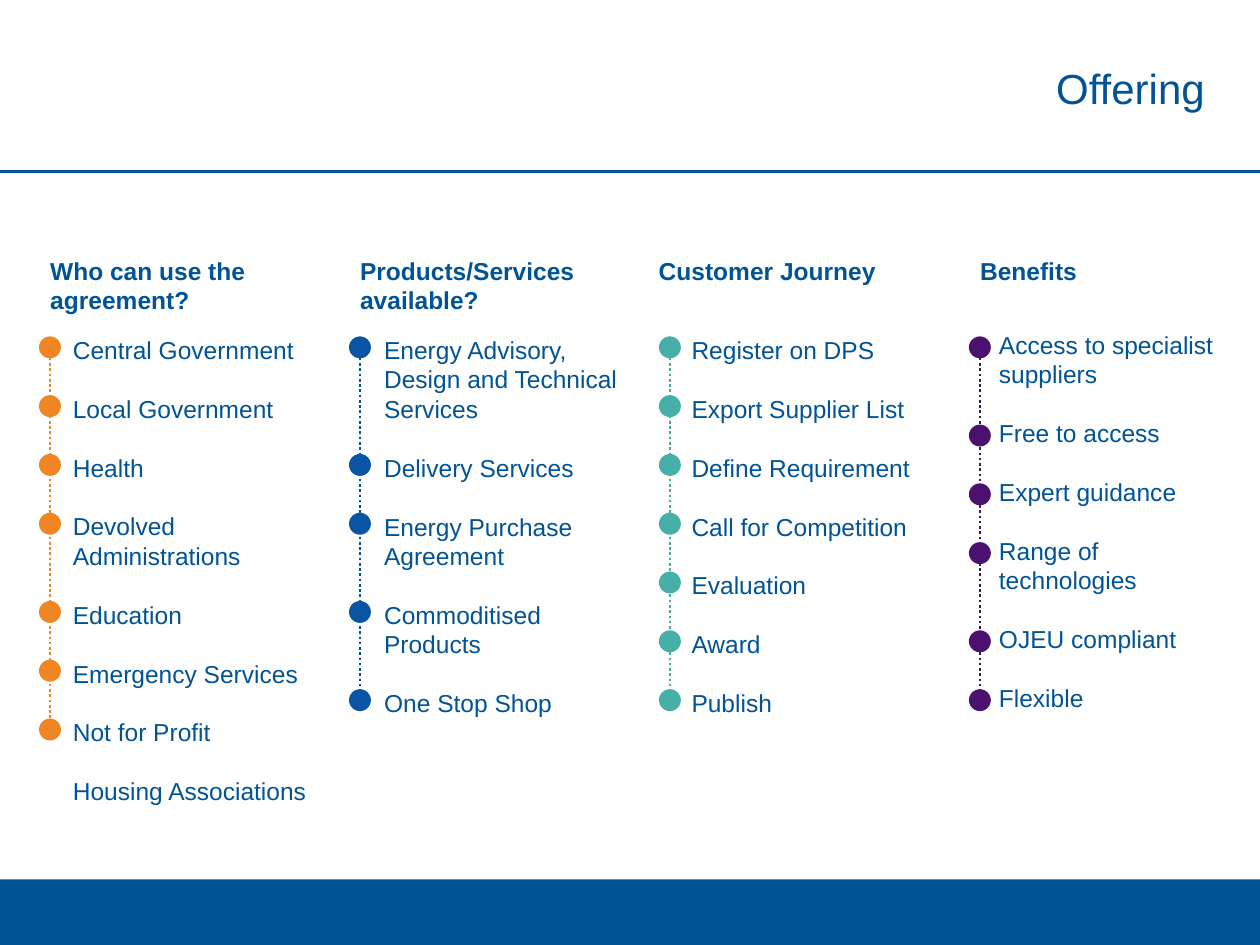
from dataclasses import dataclass
from lxml import etree
from pptx import Presentation
from pptx.dml.color import RGBColor
from pptx.enum import dml, shapes, text
from pptx.oxml import ns
from pptx.util import Inches, Pt


@dataclass(frozen=True)
class Theme:
    font: str = "Arial"
    ink: str = "005395"
    rule: str = "005799"
    title: int = 24
    body: int = 14
    lead: float = 1.2
    stroke: float = 1.5


THEME = Theme()
COLS, ROWS = 100, 75
WIDE, HIGH = Inches(10), Inches(7.5)
DOT = 1.74
PITCH = THEME.body * THEME.lead / 7.2

LISTS = [
    dict(box=(3, 19.3, 24.2, 45.5), lead="Who can use the agreement?",
         inset=1.8, drop=6.8, dot="EF8523", line="EF8523", marks=7,
         items=[("Central Government", 1), ("Local Government", 1),
                ("Health", 1), ("Devolved Administrations", 2),
                ("Education", 1), ("Emergency Services", 1),
                ("Not for Profit", 1), ("Housing Associations", 1)]),
    dict(box=(27.6, 19.3, 23.7, 38), lead="Products/Services available?",
         inset=1.9, drop=6.8, dot="0A54A6", line="005395", marks=5,
         items=[("Energy Advisory, Design and Technical Services", 3),
                ("Delivery Services", 1), ("Energy Purchase Agreement", 2),
                ("Commoditised Products", 2), ("One Stop Shop", 1)]),
    dict(box=(51.3, 19.3, 22.6, 38), lead="Customer Journey",
         inset=2.6, drop=6.8, dot="46AFA8", line="44A999", marks=7,
         items=[("Register on DPS", 1), ("Export Supplier List", 1),
                ("Define Requirement", 1), ("Call for Competition", 1),
                ("Evaluation", 1), ("Award", 1), ("Publish", 1)]),
    dict(box=(76.8, 19.3, 21.8, 38), lead="Benefits",
         inset=1.5, drop=6.4, dot="4B116F", line="371855", marks=6,
         items=[("Access to specialist suppliers", 2), ("Free to access", 1),
                ("Expert guidance", 1), ("Range of technologies", 2),
                ("OJEU compliant", 1), ("Flexible", 1)]),
]


def grid(*spots):
    sides = (WIDE / COLS, HIGH / ROWS)
    return [round(n * sides[i % 2]) for i, n in enumerate(spots)]


def tint(hue):
    return RGBColor.from_string(hue)


def shape(slide, kind, box, hue):
    item = slide.shapes.add_shape(kind, *grid(*box))
    item.shadow.inherit = False
    item.fill.solid()
    item.fill.fore_color.rgb = tint(hue)
    item.line.fill.background()


def line(slide, ends, hue, dash=None):
    item = slide.shapes.add_connector(shapes.MSO_CONNECTOR.STRAIGHT, *grid(*ends))
    item.line.color.rgb = tint(hue)
    item.line.width = Pt(THEME.stroke)
    if dash:
        item.line.dash_style = dash
    etree.SubElement(item._element.spPr, ns.qn("a:effectLst"))


def write(slide, box, words, size, pad, bold=False, side=text.PP_ALIGN.LEFT):
    frame = slide.shapes.add_textbox(*grid(*box)).text_frame
    frame.word_wrap = True
    frame.margin_left = frame.margin_right = Inches(0.1)
    frame.margin_top = frame.margin_bottom = Inches(pad)
    frame.text = "\n".join(words)
    for i, para in enumerate(frame.paragraphs):
        para.alignment = side
        para.line_spacing = Pt(size * THEME.lead)
        if i:
            para.space_before = Pt(size * THEME.lead)
        for run in para.runs:
            run.font.name = THEME.font
            run.font.size = Pt(size)
            run.font.bold = bold
            run.font.color.rgb = tint(THEME.ink)


def head(slide, box):
    x, y, w, h = box
    write(slide, (x + 39.5, y + 4, w - 42.9, 8.6), ["Offering"],
          THEME.title, 0.1, side=text.PP_ALIGN.RIGHT)
    line(slide, (x, y + h, x + w, y + h), THEME.rule)


def foot(slide, box):
    shape(slide, shapes.MSO_SHAPE.RECTANGLE, box, THEME.ink)


def column(slide, box, data):
    x, y, w, h = box
    items, marks = data["items"], data["marks"]
    write(slide, (x, y, w, 5.7), [data["lead"]], THEME.body, 0.1, bold=True)
    write(slide, (x + data["inset"], y + data["drop"],
                  w - data["inset"], h - data["drop"]),
          [words for words, _ in items], THEME.body, 0.05)
    left, top = x + (1 if data["inset"] == 2.6 else 0.1), y + 7.4
    tops = [top + PITCH * sum(n + 1 for _, n in items[:i]) for i in range(marks)]
    mid = left + DOT / 2
    line(slide, (mid, tops[0] + DOT / 2, mid, tops[-1] + DOT / 2),
         data["line"], dml.MSO_LINE.ROUND_DOT)
    for y in tops:
        shape(slide, shapes.MSO_SHAPE.OVAL, (left, y, DOT, DOT), data["dot"])


def main():
    deck = Presentation()
    deck.slide_width, deck.slide_height = WIDE, HIGH
    slide = deck.slides.add_slide(deck.slide_layouts[6])
    foot(slide, (0, 69.8, COLS, 5.2))
    head(slide, (0, 0, COLS, 13.6))
    for data in LISTS:
        column(slide, data["box"], data)
    deck.save("out.pptx")


if __name__ == "__main__":
    main()
